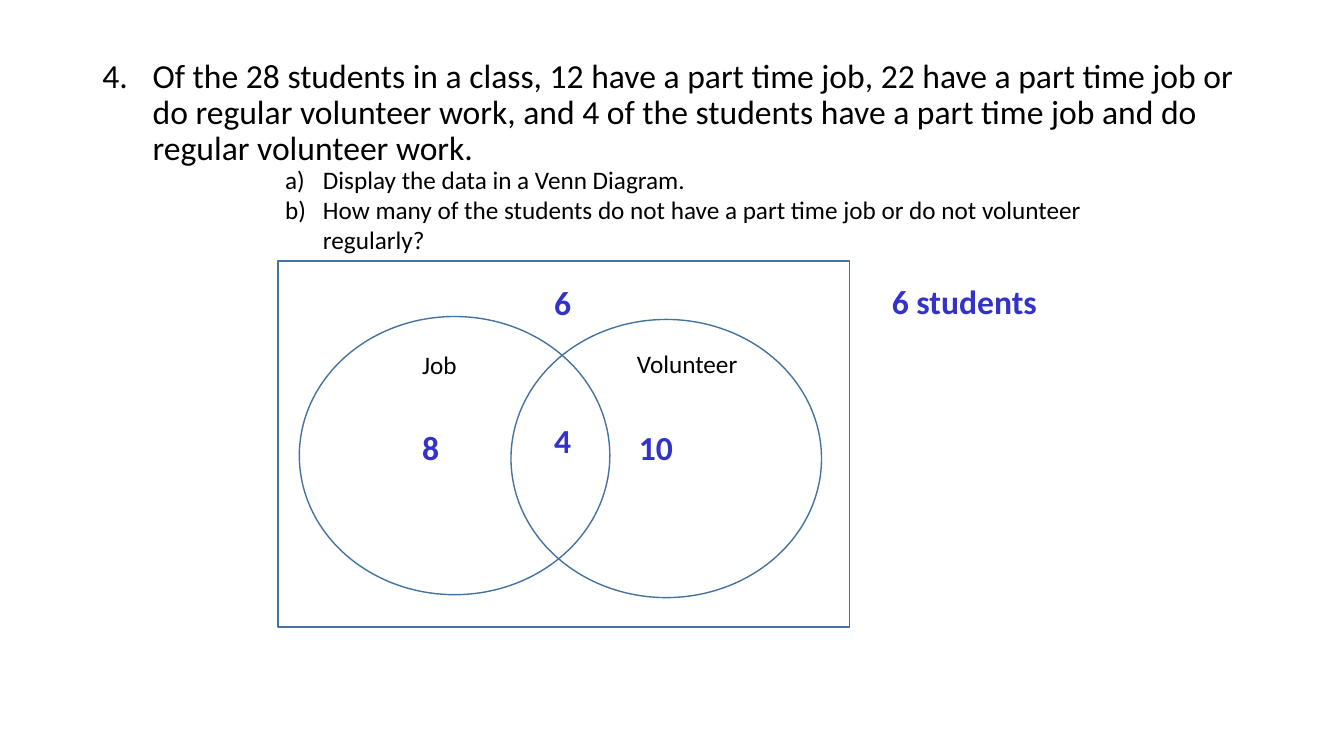
from pptx import Presentation
from pptx.dml.color import RGBColor
from pptx.enum.shapes import MSO_SHAPE as SHAPE
from pptx.enum.text import MSO_ANCHOR as ANCHOR, MSO_AUTO_SIZE as AUTO_SIZE
from pptx.oxml.ns import qn
from pptx.util import Pt
from lxml import etree


def color(hex_code):
    return RGBColor.from_string(hex_code)


class VennSlide:
    FONT = "Calibri"
    BLACK = "000000"
    ANSWER = "3333CC"
    OUTLINE = "43739E"

    def __init__(self, prs):
        self.slide = prs.slides.add_slide(prs.slide_layouts[6])
        self.shapes = self.slide.shapes

    def outline(self, kind, x, y, w, h, shapes=None):
        """Add an unfilled preset shape, to the slide or to a group."""
        sp = (shapes or self.shapes).add_shape(kind, Pt(x), Pt(y), Pt(w), Pt(h))
        sp.shadow.inherit = False
        sp.fill.background()
        sp.line.color.rgb = color(self.OUTLINE)
        sp.line.width = Pt(1)

    def text(self, text, x, y, w, h, size, hex_code=BLACK, bold=False,
             wrap=False, shapes=None):
        sp = (shapes or self.shapes).add_textbox(Pt(x), Pt(y), Pt(w), Pt(h))
        tf = sp.text_frame
        tf.text = text
        tf.word_wrap = wrap
        tf.auto_size = AUTO_SIZE.SHAPE_TO_FIT_TEXT
        for p in tf.paragraphs:
            for r in p.runs:
                r.font.name = self.FONT
                r.font.size = Pt(size)
                r.font.bold = bold
                r.font.color.rgb = color(hex_code)
        return tf

    def numbered(self, text, x, y, w, h, size, scheme, indent, start=1):
        """Add a text box whose paragraphs are numbered automatically."""
        tf = self.text(text, x, y, w, h, size, wrap=True)
        for p in tf.paragraphs:
            pPr = p._p.get_or_add_pPr()
            pPr.set("marL", str(Pt(indent)))
            pPr.set("indent", str(-Pt(indent)))
            number = etree.SubElement(pPr, qn("a:buAutoNum"), type=scheme)
            if start > 1:
                number.set("startAt", str(start))
        return tf

    def answer(self, text, x, y, w):
        self.text(text, x, y, w, 36, 24, self.ANSWER, bold=True)

    def labelled_set(self, label, x, y, label_x, label_y, label_w):
        """Add one circle of the Venn diagram grouped with its label."""
        group = self.shapes.add_group_shape().shapes
        self.outline(SHAPE.OVAL, x, y, 221.8, 198.7, group)
        self.text(label, label_x, label_y, label_w, 28.8, 18, shapes=group)


def main():
    prs = Presentation()
    prs.slide_width, prs.slide_height = Pt(960), Pt(540)
    s = VennSlide(prs)

    question = s.numbered(
        "Of the 28 students in a class, 12 have a part time job, 22 have a "
        "part time job or do regular volunteer work, and 4 of the students "
        "have a part time job and do regular volunteer work.",
        66, 28.8, 828, 104.4, 24, "arabicPeriod", 36, start=4)
    question.auto_size = AUTO_SIZE.NONE
    question.vertical_anchor = ANCHOR.MIDDLE
    question.paragraphs[0].line_spacing = 0.9

    s.numbered(
        "Display the data in a Venn Diagram.\n"
        "How many of the students do not have a part time job or do not "
        "volunteer regularly?",
        196.6, 113.8, 617.8, 72.7, 18, "alphaLcParenR", 27)

    s.labelled_set("Job", 213.8, 226.1, 294.5, 246.2, 39.6)
    s.labelled_set("Volunteer", 365, 228.2, 447.8, 245.2, 87.1)
    s.outline(SHAPE.RECTANGLE, 198.7, 186.5, 408.2, 261.4)

    for text, x, y, w in [
        ("4", 388.8, 296.6, 26.6),
        ("10", 449.3, 301.7, 38.9),
        ("8", 294.5, 301.7, 26.6),
        ("6", 388.8, 198, 26.6),
        ("6 students", 630, 197.3, 119.5),
    ]:
        s.answer(text, x, y, w)

    prs.save("out.pptx")


if __name__ == "__main__":
    main()
